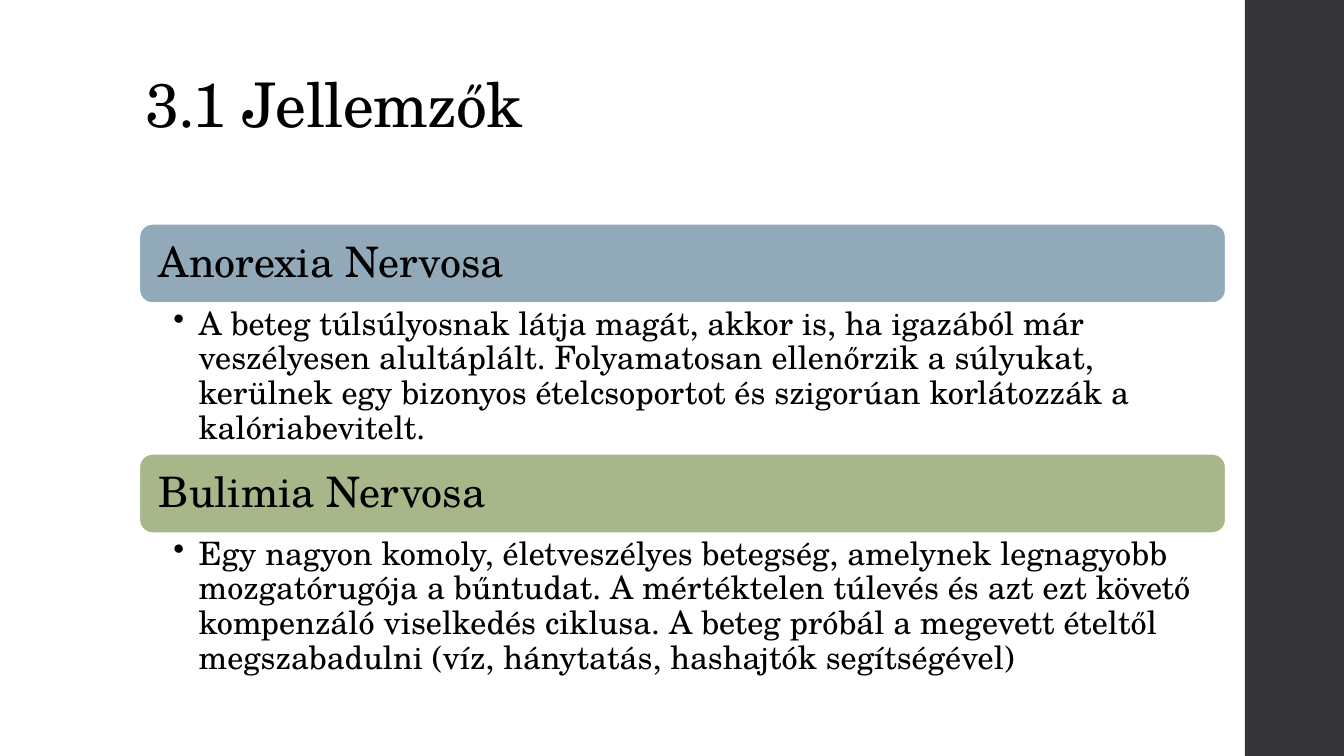
from lxml import etree
from pptx import Presentation
from pptx.dml.color import RGBColor
from pptx.enum import shapes, text
from pptx.oxml import ns
from pptx.util import Pt

WIDTH, HEIGHT = 960, 540
LEFT, TOP, BAR_W, BAR_H = 99.4, 159.8, 776.2, 56.8
BODY_H, PITCH = 107.3, 164.3

SECTIONS = [
    ("Anorexia Nervosa", "92A9B9",
     "A beteg túlsúlyosnak látja magát, akkor is, ha igazából már veszélyesen "
     "alultáplált. Folyamatosan ellenőrzik a súlyukat, kerülnek egy bizonyos "
     "ételcsoportot és szigorúan korlátozzák a kalóriabevitelt."),
    ("Bulimia Nervosa", "A7B789",
     "Egy nagyon komoly, életveszélyes betegség, amelynek legnagyobb mozgatórugója "
     "a bűntudat. A mértéktelen túlevés és azt ezt követő kompenzáló viselkedés "
     "ciklusa. A beteg próbál a megevett ételtől megszabadulni (víz, hánytatás, "
     "hashajtók segítségével)"),
]


def color(value):
    return RGBColor.from_string(value)


def write(sp, content, size, font="TeX Gyre Schola", ink="000000", spacing=0,
          anchor=text.MSO_ANCHOR.TOP, insets=(7.2, 3.6, 7.2, 3.6), bullet=False):
    """Fill a shape with one left-aligned paragraph; insets run left, top, right, bottom."""
    tf = sp.text_frame
    tf.word_wrap = True
    tf.auto_size = text.MSO_AUTO_SIZE.NONE
    tf.vertical_anchor = anchor
    tf.margin_left, tf.margin_top, tf.margin_right, tf.margin_bottom = map(Pt, insets)
    p = tf.paragraphs[0]
    p.alignment = text.PP_ALIGN.LEFT
    p.line_spacing = 0.9
    r = p.add_run()
    r.text = content
    r.font.name, r.font.size = font, Pt(size)
    r.font.color.rgb = color(ink)
    if spacing:
        r._r.get_or_add_rPr().set("spc", str(int(spacing * 100)))
    if bullet:
        p.level = 1
        pPr = p._p.get_or_add_pPr()
        pPr.set("marL", str(Pt(18)))
        pPr.set("indent", str(Pt(-18)))
        etree.SubElement(pPr, ns.qn("a:buChar")).set("char", "•")


class SlideBuilder:
    def __init__(self, s, line="FFFFFF", line_width=1.35):
        self.s, self.line, self.line_width = s, line, line_width

    def title(self, content, left, top, width, height):
        sp = self.s.shapes.title
        sp.left, sp.top, sp.width, sp.height = map(Pt, (left, top, width, height))
        write(sp, content, 44, spacing=-0.5, anchor=text.MSO_ANCHOR.BOTTOM)

    def box(self, kind, left, top, width, height, fill, outlined=False):
        sp = self.s.shapes.add_shape(kind, *map(Pt, (left, top, width, height)))
        sp.shadow.inherit = False
        sp.fill.solid()
        sp.fill.fore_color.rgb = color(fill)
        if outlined:
            sp.line.color.rgb = color(self.line)
            sp.line.width = Pt(self.line_width)
        else:
            sp.line.fill.background()
        return sp

    def heading(self, content, top, fill):
        sp = self.box(shapes.MSO_SHAPE.ROUNDED_RECTANGLE, LEFT, top, BAR_W, BAR_H,
                      fill, outlined=True)
        write(sp, content, 30, anchor=text.MSO_ANCHOR.MIDDLE,
              insets=(11.2, 8.6, 11.2, 8.6))

    def description(self, content, top):
        sp = self.s.shapes.add_textbox(*map(Pt, (LEFT, top, BAR_W, BODY_H)))
        write(sp, content, 23, insets=(24.5, 2.9, 16.5, 2.9), bullet=True)


def main():
    prs = Presentation()
    prs.slide_width, prs.slide_height = Pt(WIDTH), Pt(HEIGHT)
    slide = SlideBuilder(prs.slides.add_slide(prs.slide_layouts[5]))
    slide.box(shapes.MSO_SHAPE.RECTANGLE, 889.2, 0, WIDTH - 889.2, HEIGHT, "353537")
    slide.title("3.1 Jellemzők", 96.5, 0, BAR_W, 104.4)
    for i, (name, fill, details) in enumerate(SECTIONS):
        top = TOP + i * PITCH
        slide.heading(name, top, fill)
        slide.description(details, top + BAR_H)
    prs.save("out.pptx")


if __name__ == "__main__":
    main()
